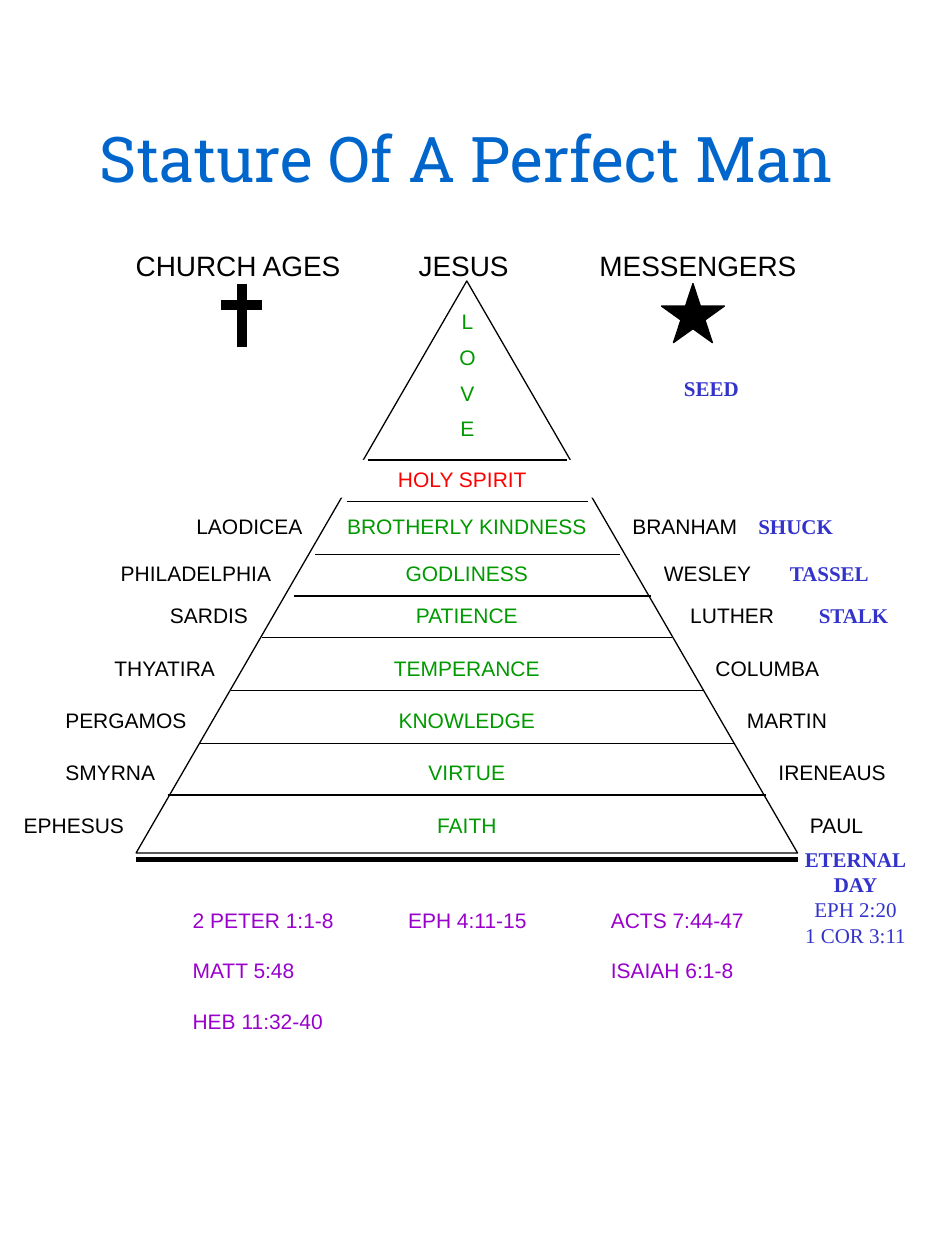
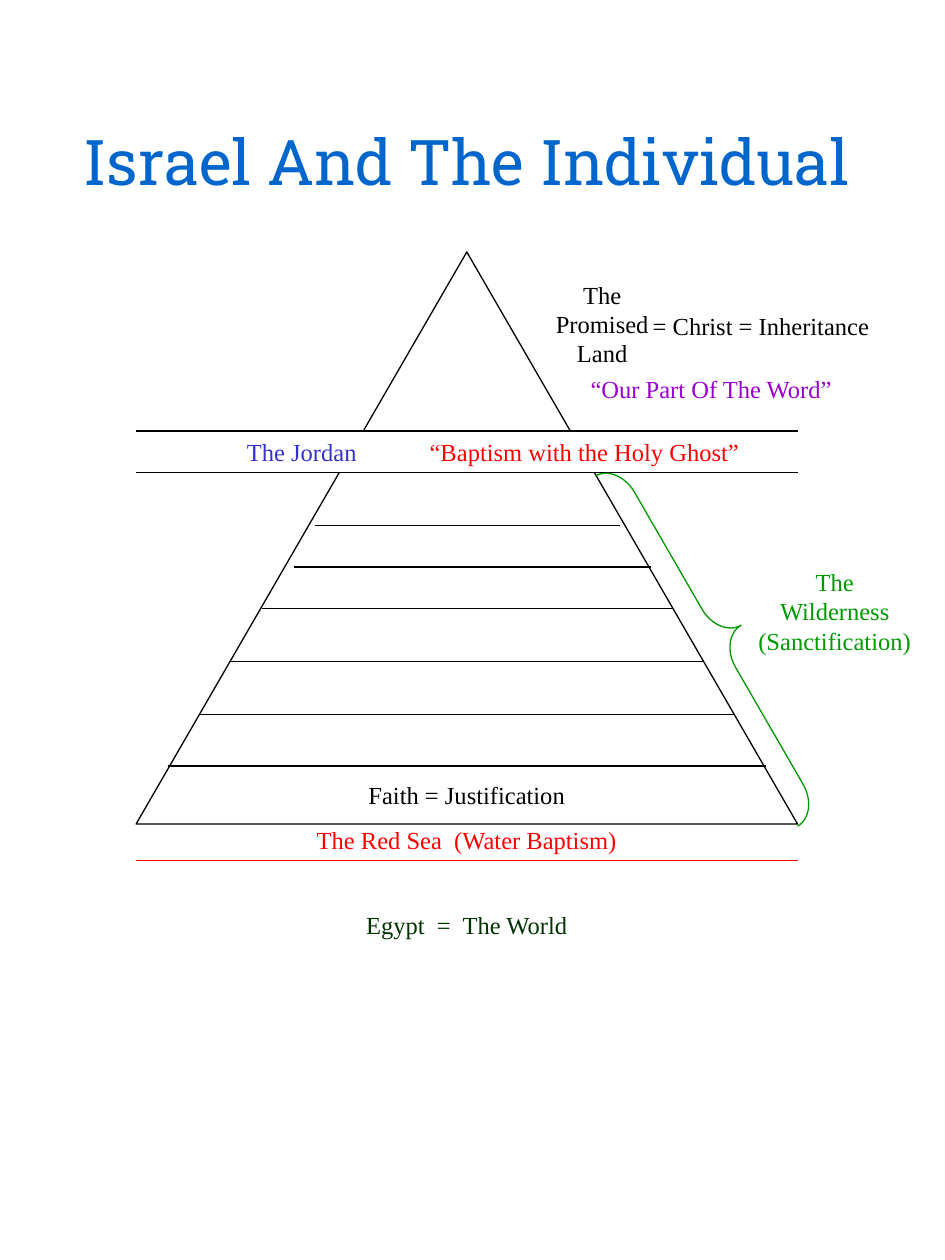
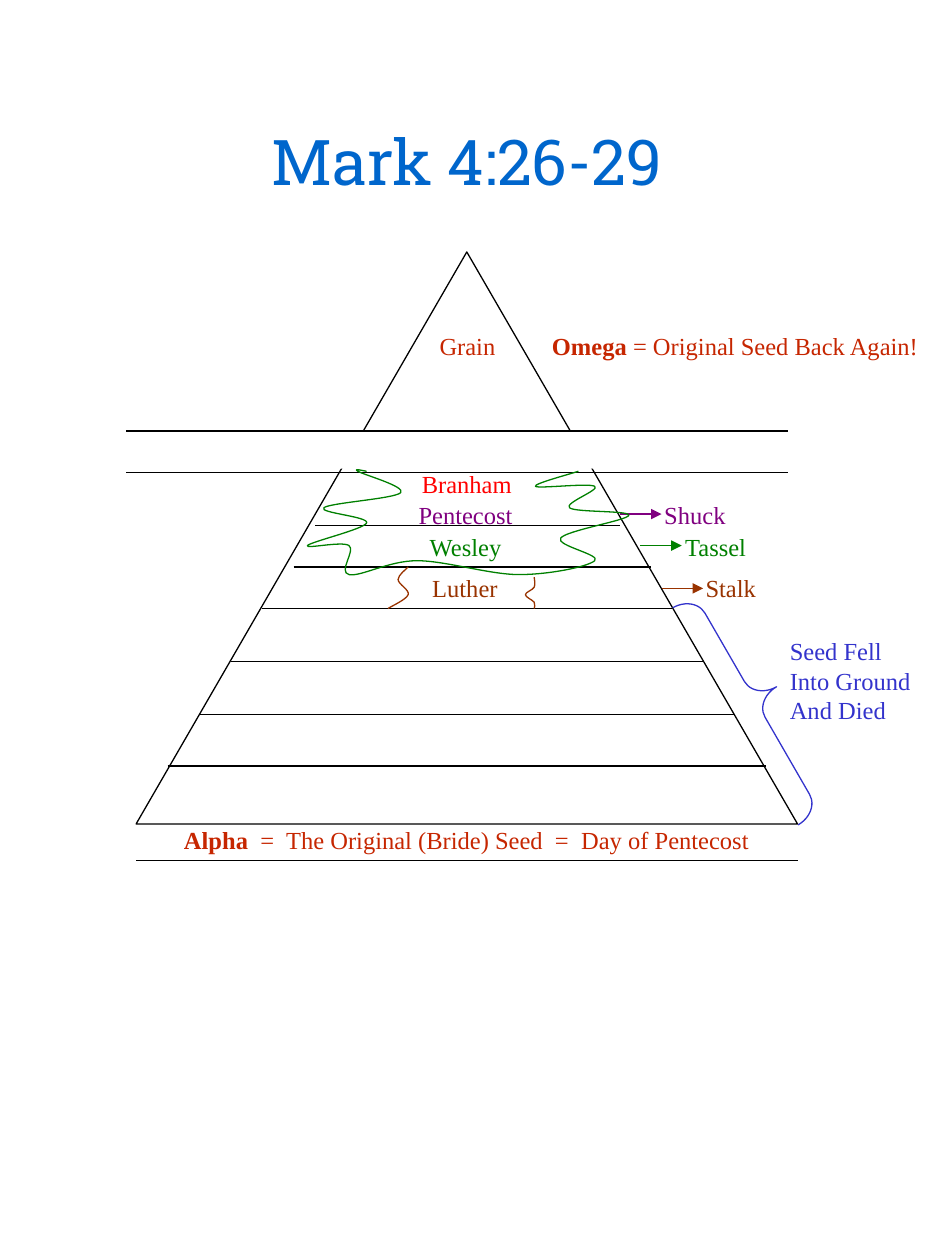
from lxml.etree import SubElement
from pptx import Presentation
from pptx.dml.color import RGBColor
from pptx.enum.shapes import MSO_CONNECTOR as Link, MSO_SHAPE as Kind
from pptx.enum.text import MSO_ANCHOR as Anchor, MSO_AUTO_SIZE as Auto, PP_ALIGN as Align
from pptx.oxml.ns import qn
from pptx.util import Inches, Pt

COLORS = {
    "black": "000000", "white": "FFFFFF", "title": "0066CC", "green": "009900",
    "red": "FF0000", "violet": "9900CC", "blue": "3333CC", "pine": "003300",
    "rust": "C62600", "leaf": "008000", "brown": "993300", "plum": "800080",
}
SANS, SERIF, SLAB = "Arial", "Times New Roman", "Roboto Slab"
WIDE, TALL = 5.25, 4.54
STEPS = [(2.17, 1.42, 2.42), (2.5, 1.25, 2.84), (2.83, 1, 3.25),
         (3.25, 0.75, 3.75), (3.67, 0.5, 4.25), (4.08, 0.25, 4.75)]
ROWS = [
    (1.8, "BROTHERLY KINDNESS", "LAODICEA", 0.38, 1.04, "BRANHAM", 3.84, 1.03),
    (2.17, "GODLINESS", "PHILADELPHIA", -0.22, 1.39, "WESLEY", 4.09, 0.9),
    (2.5, "PATIENCE", "SARDIS", 0.17, 0.82, "LUTHER", 4.3, 0.87),
    (2.92, "TEMPERANCE", "THYATIRA", -0.27, 1.03, "COLUMBA", 4.5, 1.02),
    (3.34, "KNOWLEDGE", "PERGAMOS", -0.66, 1.16, "MARTIN", 4.75, 0.84),
    (3.75, "VIRTUE", "SMYRNA", -0.66, 0.91, "IRENEAUS", 5, 1.05),
    (4.17, "FAITH", "EPHESUS", -0.99, 1, "PAUL", 5.25, 0.64),
]
CLOUD = [
    (2.17, 0.03), (1.83, 0.15), (2.3, 0.15), (2.1, 0.32), (2.57, 0.38), (2.03, 0.56),
    (2.3, 0.74), (1.7, 0.85), (0.89, 0.74), (0.35, 0.85), (0.35, 0.62), (0.02, 0.62),
    (0.49, 0.44), (0.15, 0.32), (0.76, 0.2), (0.42, 0.03), (0.49, 0.03),
]
STEM = [(0.16, 0), (0.08, 0.1), (0.16, 0.22), (0, 0.33)]
CURL = [(0.07, 0), (0.07, 0.08), (0, 0.14), (0.07, 0.2), (0.07, 0.25)]


def paint(name):
    """Return the named colour."""
    return RGBColor.from_string(COLORS[name])


def style(run, color, size, font, bold=False):
    """Format one run."""
    run.font.name, run.font.size, run.font.bold = font, Pt(size), bold
    run.font.color.rgb = paint(color)


def write(item, text, color="black", size=14, font=SERIF, bold=False,
          align=Align.CENTER, gap=0, lead="", wrap=False):
    """Fill a shape with one paragraph per line and an optional bold lead."""
    frame = item.text_frame
    frame.text = lead or text
    frame.word_wrap = wrap
    frame.margin_left = Inches(0.1 if align == Align.LEFT else 0)
    frame.margin_right = 0
    if lead:
        frame.paragraphs[0].add_run().text = text
    for i, para in enumerate(frame.paragraphs):
        para.alignment = align
        para.space_before = Pt(gap if i else 0)
        for j, run in enumerate(para.runs):
            style(run, color, size, font, bold or (bool(lead) and j == 0))
    return frame


def label(slide, x, y, w, text, color="black", size=14, gap=0, **look):
    """Add a text box as high as its lines."""
    lines = text.count("\n") + 1
    high = lines * (size * 1.2 + gap) / 72 + 0.1
    item = slide.shapes.add_textbox(Inches(x), Inches(y), Inches(w), Inches(high))
    return write(item, text, color, size, gap=gap, **look)


def shape(slide, kind, x, y, w, h, fill=None, line=None):
    """Add a flat preset shape."""
    item = slide.shapes.add_shape(kind, Inches(x), Inches(y), Inches(w), Inches(h))
    return flat(item, fill, line)


def flat(item, fill, line):
    """Set fill and line of a shape and drop its shadow."""
    item.shadow.inherit = False
    if fill:
        item.fill.solid()
        item.fill.fore_color.rgb = paint(fill)
    else:
        item.fill.background()
    if line:
        item.line.color.rgb = paint(line)
        item.line.width = Pt(0.75)
    else:
        item.line.fill.background()
    return item


def rule(slide, x, y, w, h=0, color="black", width=0.75, arrow=False):
    """Draw a straight line, with an arrowhead if wanted."""
    item = slide.shapes.add_connector(
        Link.STRAIGHT, Inches(x), Inches(y), Inches(x + w), Inches(y + h))
    item.line.color.rgb = paint(color)
    item.line.width = Pt(width)
    props = item._element.spPr
    if arrow:
        SubElement(props.find(qn("a:ln")), qn("a:tailEnd"), type="triangle")
    SubElement(props, qn("a:effectLst"))


def curve(slide, x, y, knots, color):
    """Draw a smooth open curve through the knots."""
    spots = [(Inches(x + u), Inches(y + v)) for u, v in knots]
    pen = slide.shapes.build_freeform(*spots[0])
    pen.add_line_segments(spots[1:], close=False)
    item = flat(pen.convert_to_shape(), None, color)
    dots = [(int(dot.get("x")), int(dot.get("y"))) for dot in item._element.iter(qn("a:pt"))]
    ends = [dots[0]] + dots + [dots[-1]]
    legs = list(item._element.iter(qn("a:lnTo")))
    for leg, a, b, c, d in zip(legs, ends, ends[1:], ends[2:], ends[3:]):
        bend = SubElement(leg.getparent(), qn("a:cubicBezTo"))
        near = [q + (r - p) / 6 for p, q, r in zip(a, b, c)]
        far = [r - (s - q) / 6 for q, r, s in zip(b, c, d)]
        for u, v in (near, far, c):
            SubElement(bend, qn("a:pt"), x=str(round(u)), y=str(round(v)))
        leg.getparent().remove(leg)


def brace(slide, x, y, w, h, bend, mid, color):
    """Draw a brace that leans along the pyramid side."""
    item = shape(slide, Kind.RIGHT_BRACE, x, y, w, h, line=color)
    item.adjustments[0], item.adjustments[1] = bend, mid
    item.rotation = 330


def start(deck, text, y=0.92):
    """Add a slide with its title."""
    slide = deck.slides.add_slide(deck.slide_layouts[5])
    title = slide.shapes.title
    title.left, title.top, title.width, title.height = map(Inches, (0.58, y, 6.25, 0.57))
    frame = title.text_frame
    frame.text = text
    frame.word_wrap, frame.auto_size = False, Auto.NONE
    frame.margin_left = frame.margin_right = 0
    frame.vertical_anchor = Anchor.TOP
    frame.paragraphs[0].alignment = Align.CENTER
    style(frame.paragraphs[0].runs[0], "title", 36, SLAB)
    return slide


def tower(slide, x, y, left, width, high):
    """Draw the pyramid with its steps and return the gap below its top."""
    shape(slide, Kind.ISOSCELES_TRIANGLE, x, y, WIDE, TALL, "white", "black")
    gap = shape(slide, Kind.RECTANGLE, x + left, y + 1.42, width, high, "white")
    for drop, inset, span in STEPS:
        rule(slide, x + inset, y + drop, span)
    return gap


def banks(slide, x, y):
    """Draw the two lines that bound the gap."""
    for drop in (1.42, 1.75):
        rule(slide, x, y + drop, WIDE)


def heads(slide, x, y):
    """Place the three headings with cross and star."""
    for left, width, text in ((-0.19, 2, "CHURCH AGES"), (1.31, 2.58, "JESUS"),
                              (3.25, 2.42, "MESSENGERS")):
        label(slide, x + left, y - 0.31, width, text, size=16, font=SANS)
    rule(slide, x + 0.84, y + 0.02, 0, 0.5, width=6)
    rule(slide, x + 0.67, y + 0.19, 0.33, width=6)
    shape(slide, Kind.STAR_5_POINT, x + 4.17, y + 0.02, 0.5, 0.47, "black", "black")


def ages(slide, x, y):
    """Place virtues, church ages and messengers along the steps."""
    label(slide, x + 2.09, y + 0.17, 1.08, "L\nO\nV\nE", "green", 12, font=SANS, gap=6)
    rule(slide, x + 1.84, y + 1.42, 1.58)
    rule(slide, x + 1.67, y + 1.75, 1.92)
    for drop, virtue, age, left, wide, name, right, span in ROWS:
        label(slide, x, y + drop, WIDE, virtue, "green", 12, font=SANS)
        label(slide, x + left, y + drop, wide, age, size=12, font=SANS, align=Align.LEFT)
        label(slide, x + right, y + drop, span, name, size=12, font=SANS, align=Align.LEFT)
    for left, drop, wide, text in ((4.25, 0.7, 0.64, "SEED"), (4.84, 1.8, 0.79, "SHUCK"),
                                   (5.09, 2.17, 0.84, "TASSEL"), (5.32, 2.5, 0.77, "STALK")):
        label(slide, x + left, y + drop, wide, text, "blue", 12, bold=True, align=Align.LEFT)


def verses(slide, x, y):
    """Place the base line and the verses below it."""
    rule(slide, x, y, WIDE, width=3)
    for left, wide, text in ((0.35, 1.32, "2 PETER 1:1-8\nMATT 5:48\nHEB 11:32-40"),
                             (2.06, 1.28, "EPH 4:11-15"),
                             (3.67, 1.26, "ACTS 7:44-47\nISAIAH 6:1-8")):
        label(slide, x + left, y + 0.33, wide, text, "violet", 12, font=SANS,
              align=Align.LEFT, gap=14.5)
    day = label(slide, x + 5.17, y - 0.15, 1.08, "ETERNAL\nDAY\nEPH 2:20\n1 COR 3:11", "blue", 12)
    for para in day.paragraphs[:2]:
        para.runs[0].font.bold = True


def jordan(gap):
    """Write the river and its meaning into the gap, parted by a tab."""
    frame = write(gap, "\t“Baptism with the Holy Ghost”", "red", align=Align.LEFT,
                  lead="The Jordan")
    frame.margin_left = Inches(0.54)
    frame.word_wrap = True
    para = frame.paragraphs[0]
    style(para.runs[0], "blue", 14, SERIF)
    tabs = SubElement(para._p.get_or_add_pPr(), qn("a:tabLst"))
    SubElement(tabs, qn("a:tab"), pos=str(Inches(1.45)), algn="l")


def stature(deck, x=1.08, y=2.23):
    """Build the slide on the stature of a perfect man."""
    slide = start(deck, "Stature Of A Perfect Man", 0.9)
    gap = tower(slide, x, y, 1.34, 2.5, 0.3)
    write(gap, "HOLY SPIRIT", "red", 12, SANS)
    heads(slide, x, y)
    ages(slide, x, y)
    verses(slide, x, y + 4.59)


def israel(deck, x=1.08, y=2):
    """Build the slide on Israel and the individual."""
    slide = start(deck, "Israel And The Individual")
    jordan(tower(slide, x, y, 0.34, 5, 0.33))
    banks(slide, x, y)
    rule(slide, x, y + 4.83, WIDE, color="red")
    for left, drop, wide, text, color in (
            (3.23, 0.17, 0.94, "The\nPromised\nLand", "black"),
            (4, 0.42, 1.92, "= Christ = Inheritance", "black"),
            (3.5, 0.92, 2.13, "“Our Part Of The Word”", "violet"),
            (4.84, 2.45, 1.41, "The\nWilderness\n(Sanctification)", "green"),
            (0, 4.14, WIDE, "Faith = Justification", "black"),
            (0, 4.5, WIDE, "The Red Sea  (Water Baptism)", "red"),
            (0, 5.17, WIDE, "Egypt  =  The World", "pine")):
        label(slide, x + left, y + drop, wide, text, color)
    brace(slide, x + 4.42, y + 1.46, 0.41, 3.21, 0.65, 0.5, "green")


def mark(deck, x=1.08, y=2):
    """Build the slide on the seed in Mark 4."""
    slide = start(deck, "Mark 4:26-29")
    tower(slide, x, y, 0.5, 4.25, 0.3)
    banks(slide, x - 0.08, y)
    rule(slide, x, y + 4.83, WIDE)
    for left, drop, wide, text, color in (
            (2.17, 0.58, 0.92, "Grain", "rust"), (2.17, 1.67, 0.91, "Branham", "red"),
            (2.14, 1.92, 0.95, "Pentecost", "plum"), (2.22, 2.17, 0.79, "Wesley", "leaf"),
            (2.25, 2.5, 0.72, "Luther", "brown"), (4.09, 1.92, 0.69, "Shuck", "plum"),
            (4.25, 2.17, 0.7, "Tassel", "leaf"), (4.42, 2.5, 0.6, "Stalk", "brown")):
        label(slide, x + left, y + drop, wide, text, color)
    for left, drop, color in ((3.84, 2.08, "plum"), (4, 2.33, "leaf"), (4.17, 2.67, "brown")):
        rule(slide, x + left, y + drop, 0.33, color=color, arrow=True)
    curve(slide, x + 1.34, y + 1.71, CLOUD, "leaf")
    curve(slide, x + 2, y + 2.5, STEM, "brown")
    curve(slide, x + 3.09, y + 2.58, CURL, "brown")
    label(slide, x + 3.2, y + 0.58, 3.11, " = Original Seed Back Again!", "rust", lead="Omega")
    label(slide, x, y + 4.5, WIDE, "  =  The Original (Bride) Seed  =  Day of Pentecost",
          "rust", lead="Alpha")
    brace(slide, x + 4.73, y + 2.59, 0.4, 1.99, 0.41, 0.48, "blue")
    label(slide, x + 5.09, y + 3, 1.17, "Seed Fell Into Ground And Died", "blue",
          align=Align.LEFT, wrap=True)


def main():
    """Build and save the deck."""
    deck = Presentation()
    deck.slide_width, deck.slide_height = Inches(7.5), Inches(10)
    for build in (stature, israel, mark):
        build(deck)
    deck.save("out.pptx")


if __name__ == "__main__":
    main()
